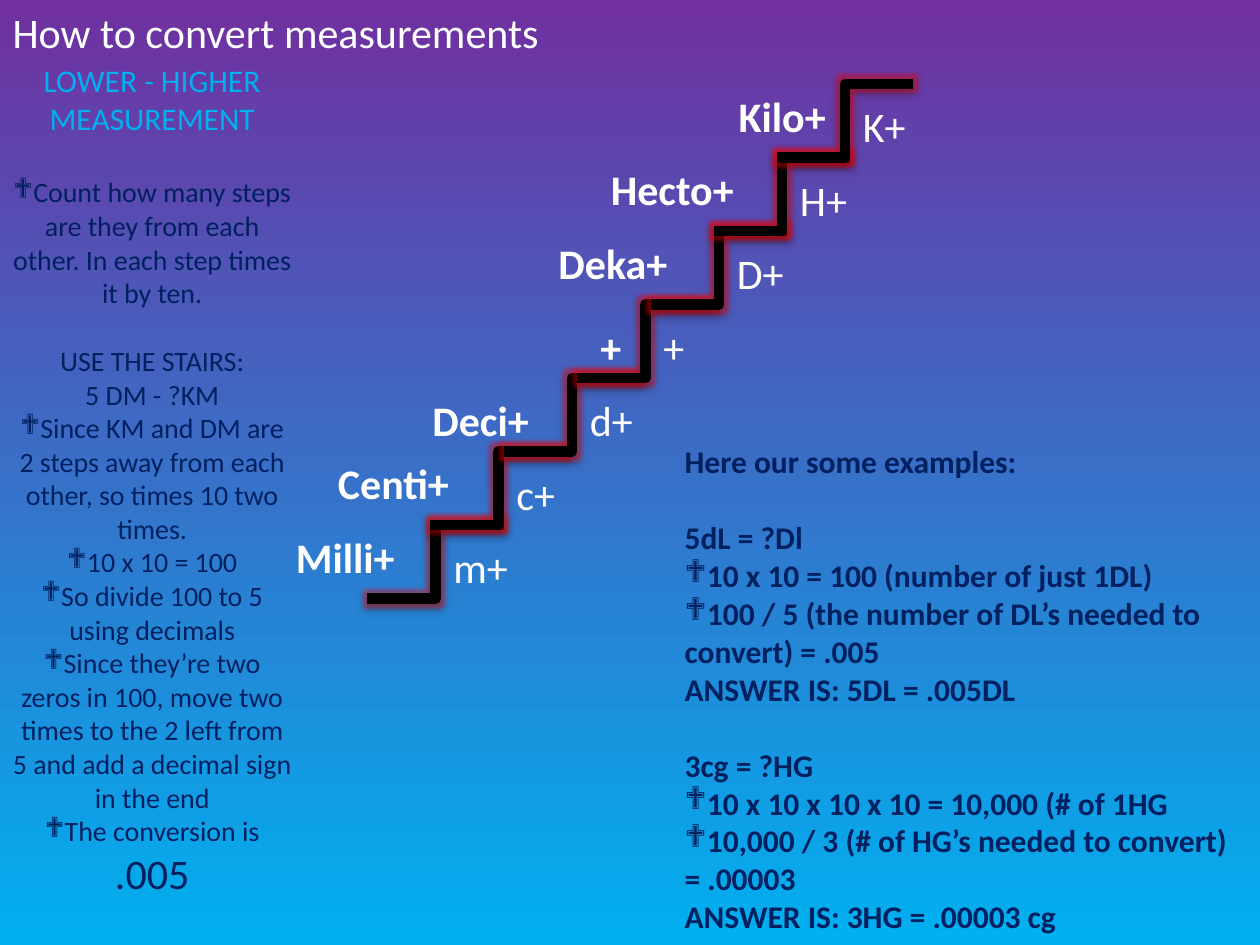
from dataclasses import dataclass

from lxml import etree
from pptx import Presentation, util as u
from pptx.dml.color import RGBColor
from pptx.enum import shapes, text
from pptx.oxml.ns import qn

FONT = "Calibri"
WHITE, NAVY, SKY, PURPLE = "FFFFFF", "002060", "00B0F0", "7030A0"
LEFT, CENTER = text.PP_ALIGN.LEFT, text.PP_ALIGN.CENTER
STEP_W, STEP_H, LABEL_H = 13, 7, 6

prs = Presentation()
prs.slide_width, prs.slide_height = u.Inches(10), u.Inches(7.5)
CELL = prs.slide_width / 120  # grid of 120 columns by 90 rows


@dataclass
class Step:
    name: str
    symbol: str
    col: int
    name_col: int
    name_row: int
    name_cols: int
    align: text.PP_ALIGN = LEFT


@dataclass
class Para:
    text: str
    size: int = 16
    color: str = NAVY
    bullet: bool = False
    gap: float = 0
    bold: bool = False


def rgb(value: str) -> RGBColor:
    return RGBColor.from_string(value)


def grid(n: float) -> u.Emu:
    return u.Emu(round(n * CELL))


def place(sp, col: float, row: float, cols: float, rows: float) -> None:
    sp.left, sp.top, sp.width, sp.height = map(grid, (col, row, cols, rows))


def style_run(r, size: int, color: str, bold: bool = False) -> None:
    r.font.name, r.font.size, r.font.bold = FONT, u.Pt(size), bold
    r.font.color.rgb = rgb(color)


def add_label(s, words: str, col: float, row: float, cols: float,
              bold: bool = False, align=LEFT) -> None:
    sp = s.shapes.add_textbox(*map(grid, (col, row, cols, LABEL_H)))
    tf = sp.text_frame
    tf.word_wrap = True
    tf.text = words
    tf.paragraphs[0].alignment = align
    style_run(tf.paragraphs[0].runs[0], 24, WHITE, bold)


def add_effect(parent, tag: str, color: str, alpha: int, **attrs: str) -> None:
    effect = etree.SubElement(parent, qn(tag), **attrs)
    clr = etree.SubElement(effect, qn("a:srgbClr"), val=color)
    etree.SubElement(clr, qn("a:alpha"), val=str(alpha * 1000))


def add_stair(s, col: float, row: float) -> None:
    line = s.shapes.add_connector(
        shapes.MSO_CONNECTOR.ELBOW,
        *map(grid, (col, row + STEP_H, col + STEP_W, row)))
    line.line.color.rgb = rgb("000000")
    line.line.width = u.Pt(6)
    effects = etree.SubElement(line._element.spPr, qn("a:effectLst"))
    add_effect(effects, "a:glow", "FF0000", 40, rad="63500")
    add_effect(effects, "a:outerShdw", "000000", 35, blurRad="40000",
               dist="23000", dir="5400000", rotWithShape="0")


def fill_list(sp, paras: list[Para], align) -> None:
    tf = sp.text_frame
    tf.word_wrap = True
    tf.auto_size = text.MSO_AUTO_SIZE.NONE
    tf.vertical_anchor = text.MSO_ANCHOR.TOP
    tf.text = "\n".join(para.text for para in paras)
    for p, para in zip(tf.paragraphs, paras):
        p.alignment = align
        p.space_before = u.Pt(para.gap)
        pPr = p._p.get_or_add_pPr()
        pPr.set("marL", "0")
        pPr.set("indent", "0")
        if para.bullet:
            etree.SubElement(pPr, qn("a:buFont"), typeface="Wingdings")
            etree.SubElement(pPr, qn("a:buChar"), char="❖")
        else:
            etree.SubElement(pPr, qn("a:buNone"))
        style_run(p.runs[0], para.size, para.color, para.bold)


def example(words: str, bullet: bool = False, gap: float = 0) -> Para:
    return Para(words, 18, NAVY, bullet, gap, bold=True)


STEPS = [  # from the bottom of the stairs to the top
    Step("Milli+", "m+", 35, 27, 50, 13),
    Step("Centi+", "c+", 41, 31, 43, 15),
    Step("Deci+", "d+", 48, 40, 37, 13),
    Step("+", "+", 55, 56, 30, 4),
    Step("Deka+", "D+", 62, 52, 22, 15),
    Step("Hecto+", "H+", 68, 57, 15, 17),
    Step("Kilo+", "K+", 74, 67, 8, 15, CENTER),
]
METHOD = [
    Para("LOWER - HIGHER", 18, SKY),
    Para("MEASUREMENT", 18, SKY),
    Para("Count how many steps are they from each other. In each step "
         "times it by ten.", bullet=True, gap=22),
    Para("USE THE STAIRS:", gap=19.5),
    Para("5 DM - ?KM"),
    Para("Since KM and DM are 2 steps away from each other, so times 10 "
         "two times.", bullet=True),
    Para("10 x 10 = 100", bullet=True),
    Para("So divide 100 to 5 using decimals", bullet=True),
    Para("Since they’re two zeros in 100, move two times to the 2 left from "
         "5 and add a decimal sign in the end", bullet=True),
    Para("The conversion is ", bullet=True),
]
EXAMPLES = [
    example("Here our some examples:"),
    example("5dL = ?Dl", gap=22),
    example("10 x 10 = 100 (number of just 1DL)", True),
    example("100 / 5 (the number of DL’s needed to convert) = .005", True),
    example("ANSWER IS: 5DL = .005DL"),
    example("3cg = ?HG", gap=22),
    example("10 x 10 x 10 x 10 = 10,000 (# of 1HG", True),
    example("10,000 / 3 (# of HG’s needed to convert) = .00003", True),
    example("ANSWER IS: 3HG = .00003 cg"),
]

# Slide and background
s = prs.slides.add_slide(prs.slide_layouts[3])
title, method, examples = list(s.placeholders)[:3]
fill = s.background.fill
fill.gradient()
fill.gradient_angle = 270
for stop, color in zip(fill.gradient_stops, (PURPLE, SKY)):
    stop.color.rgb = rgb(color)

# Title
place(title, 0, 0, 120, 6)
title.text_frame.text = "How to convert measurements"
title.text_frame.vertical_anchor = text.MSO_ANCHOR.TOP
title.text_frame.paragraphs[0].alignment = LEFT
style_run(title.text_frame.paragraphs[0].runs[0], 24, WHITE)

# Method on the left, with its larger result
place(method, 0, 5.2, 29, 84.8)
fill_list(method, METHOD, CENTER)
r = method.text_frame.paragraphs[-1].add_run()
r.text = ".005"
style_run(r, 24, NAVY)

# Stairs with unit names and symbols
for i, step in enumerate(STEPS):
    row = 50 - i * STEP_H
    add_stair(s, step.col, row)
    add_label(s, step.symbol, step.col + 7, row + 1, 9)
    add_label(s, step.name, step.name_col, step.name_row, step.name_cols,
              bold=True, align=step.align)

# Worked examples
place(examples, 64, 41.5, 56, 52)
fill_list(examples, EXAMPLES, LEFT)

prs.save("out.pptx")
